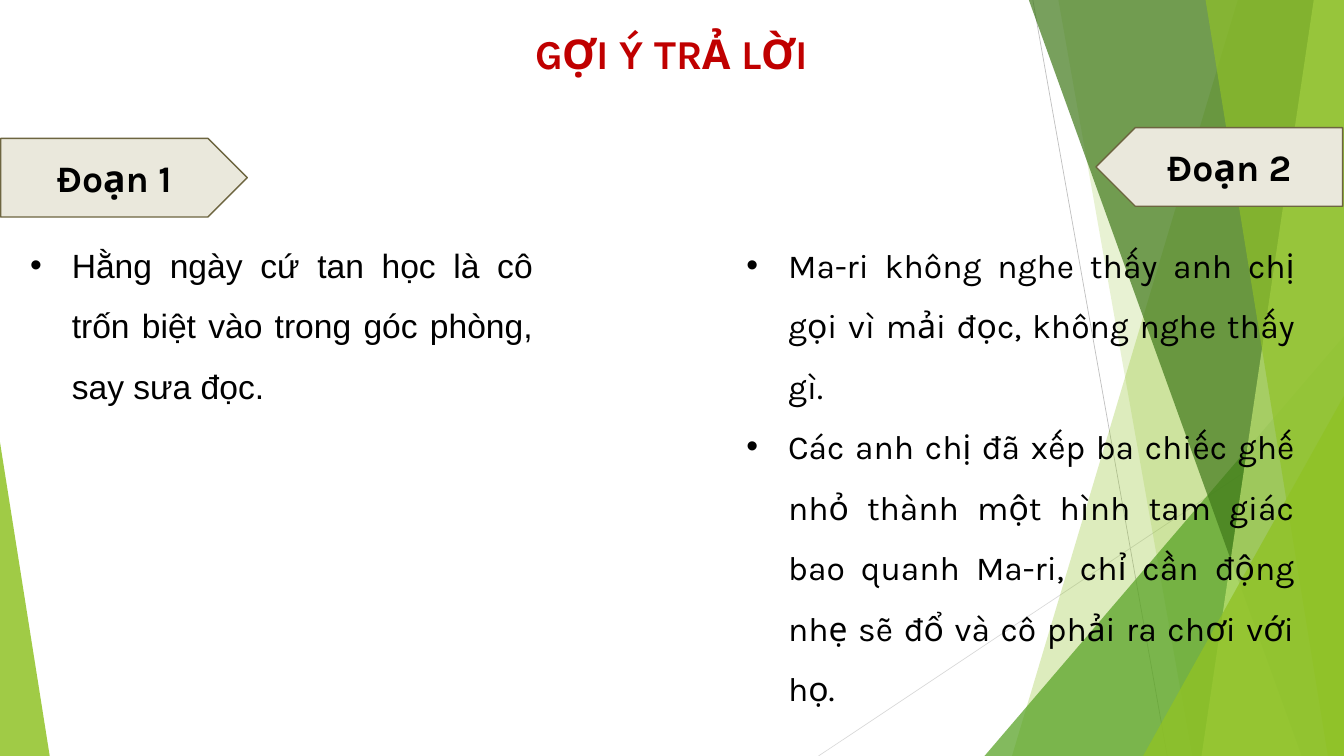
from lxml.etree import SubElement
from pptx import Presentation
from pptx.dml.color import RGBColor
from pptx.enum.shapes import MSO_CONNECTOR, MSO_SHAPE
from pptx.enum.text import MSO_ANCHOR, MSO_AUTO_SIZE, PP_ALIGN
from pptx.oxml.ns import qn
from pptx.util import Inches, Pt

WIDE, HIGH = 20, 11.25
RED = RGBColor(0xC0, 0x00, 0x00)
BLACK = RGBColor(0x00, 0x00, 0x00)
CREAM = RGBColor(0xEA, 0xE8, 0xDC)
OLIVE = RGBColor(0x6D, 0x65, 0x40)
LIME = RGBColor(0x90, 0xC2, 0x26)
PALE = RGBColor(0xC0, 0xE4, 0x74)
GREEN = RGBColor(0x54, 0xA0, 0x21)
DARK = RGBColor(0x3F, 0x78, 0x19)
GREY = RGBColor(0xBF, 0xBF, 0xBF)
LIGHT = RGBColor(0xD9, 0xD9, 0xD9)

LEFT_TEXT = ["Hằng ngày cứ tan học là cô trốn biệt vào trong góc phòng, say sưa đọc."]
RIGHT_TEXT = [
    "Ma-ri không nghe thấy anh chị gọi vì mải đọc, không nghe thấy gì.",
    "Các anh chị đã xếp ba chiếc ghế nhỏ thành một hình tam giác bao quanh "
    "Ma-ri, chỉ cần động nhẹ sẽ đổ và cô phải ra chơi với họ.",
]


def add_line(slide, start, end, color):
    points = [Inches(v) for v in (*start, *end)]
    line = slide.shapes.add_connector(MSO_CONNECTOR.STRAIGHT, *points)
    line.line.color.rgb = color
    line.line.width = Pt(0.75)
    SubElement(line._element.spPr, qn("a:effectLst"))


def paint(shape, color, alpha):
    """Fill without outline; alpha is the opacity in percent."""
    shape.shadow.inherit = False
    shape.line.fill.background()
    shape.fill.solid()
    shape.fill.fore_color.rgb = color
    tone = shape._element.spPr.find(qn("a:solidFill"))[0]
    SubElement(tone, qn("a:alpha"), val=str(alpha * 1000))


def add_facet(slide, top, base, color, alpha):
    """Full-height band from a slanted left edge to the slide's right edge."""
    build = slide.shapes.build_freeform(Inches(top), 0)
    corners = [(WIDE, 0), (WIDE, HIGH), (base, HIGH)]
    build.add_line_segments([(Inches(x), Inches(y)) for x, y in corners])
    paint(build.convert_to_shape(), color, alpha)


def add_corner(slide, left, top, width, peak, color, alpha):
    """Right triangle on the bottom edge; peak is 0 at left, 1 at right."""
    shape = slide.shapes.add_shape(
        MSO_SHAPE.ISOSCELES_TRIANGLE,
        Inches(left), Inches(top), Inches(width), Inches(HIGH - top))
    shape.adjustments[0] = peak
    paint(shape, color, alpha)


def style(para, size, color, align, font="Karla", bold=False):
    para.alignment = align
    for run in para.runs:
        run.font.name = font
        run.font.size = Pt(size)
        run.font.bold = bold
        run.font.color.rgb = color


def set_title(slide, text):
    title = slide.shapes.title
    title.left, title.top = Inches(5.98), Inches(0)
    title.width, title.height = Inches(8.03), Inches(1.07)
    frame = title.text_frame
    frame.text = text
    frame.auto_size = MSO_AUTO_SIZE.NONE
    frame.vertical_anchor = MSO_ANCHOR.TOP
    para = frame.paragraphs[0]
    para.line_spacing = 1.5
    style(para, 44, RED, PP_ALIGN.CENTER, bold=True)


def add_tag(slide, left, top, text, flip=False):
    tag = slide.shapes.add_shape(
        MSO_SHAPE.PENTAGON, Inches(left), Inches(top), Inches(3.67), Inches(1.17))
    tag.shadow.inherit = False
    tag.fill.solid()
    tag.fill.fore_color.rgb = CREAM
    tag.line.color.rgb = OLIVE
    tag.line.width = Pt(1.5)
    if flip:
        tag._element.spPr.find(qn("a:xfrm")).set("flipH", "1")
    frame = tag.text_frame
    frame.text = text
    frame.vertical_anchor = MSO_ANCHOR.MIDDLE
    style(frame.paragraphs[0], 40, BLACK, PP_ALIGN.CENTER, bold=True)


def add_list(slide, left, width, height, items, font):
    box = slide.shapes.add_textbox(
        Inches(left), Inches(3.29), Inches(width), Inches(height))
    frame = box.text_frame
    frame.word_wrap = True
    frame.text = "\n".join(items)
    indent = Inches(0.62)
    for para in frame.paragraphs:
        para.line_spacing = 1.5
        style(para, 36, BLACK, PP_ALIGN.JUSTIFY, font)
        props = para._p.get_or_add_pPr()
        props.set("marL", str(indent))
        props.set("indent", str(-indent))
        SubElement(props, qn("a:buFont"), typeface="Arial")
        SubElement(props, qn("a:buChar"), char="•")


def add_decor(slide):
    add_line(slide, (15.37, 0), (17.37, HIGH), GREY)
    add_line(slide, (WIDE, 6.04), (12.18, HIGH), LIGHT)
    add_facet(slide, 18.42, 15.06, LIME, 30)
    add_facet(slide, 15.75, 17.74, LIME, 20)
    add_corner(slide, 14.65, 5, 5.35, 1, GREEN, 72)
    add_facet(slide, 15.31, 19.37, DARK, 70)
    add_facet(slide, 19.55, 17.88, PALE, 70)
    add_facet(slide, 17.94, 19.76, LIME, 65)
    add_corner(slide, 17.01, 5.89, 2.99, 1, LIME, 80)
    add_corner(slide, 0, 6.58, 0.74, 0, LIME, 85)


def main():
    deck = Presentation()
    deck.slide_width, deck.slide_height = Inches(WIDE), Inches(HIGH)
    slide = deck.slides.add_slide(deck.slide_layouts[5])
    add_decor(slide)
    set_title(slide, "GỢI Ý TRẢ LỜI")
    add_tag(slide, 0.01, 2.06, "Đoạn 1")
    add_list(slide, 0.35, 7.68, 2.72, LEFT_TEXT, "Arial")
    add_tag(slide, 16.31, 1.9, "Đoạn 2", flip=True)
    add_list(slide, 11.01, 8.35, 7.26, RIGHT_TEXT, "Karla")
    deck.save("out.pptx")


if __name__ == "__main__":
    main()
